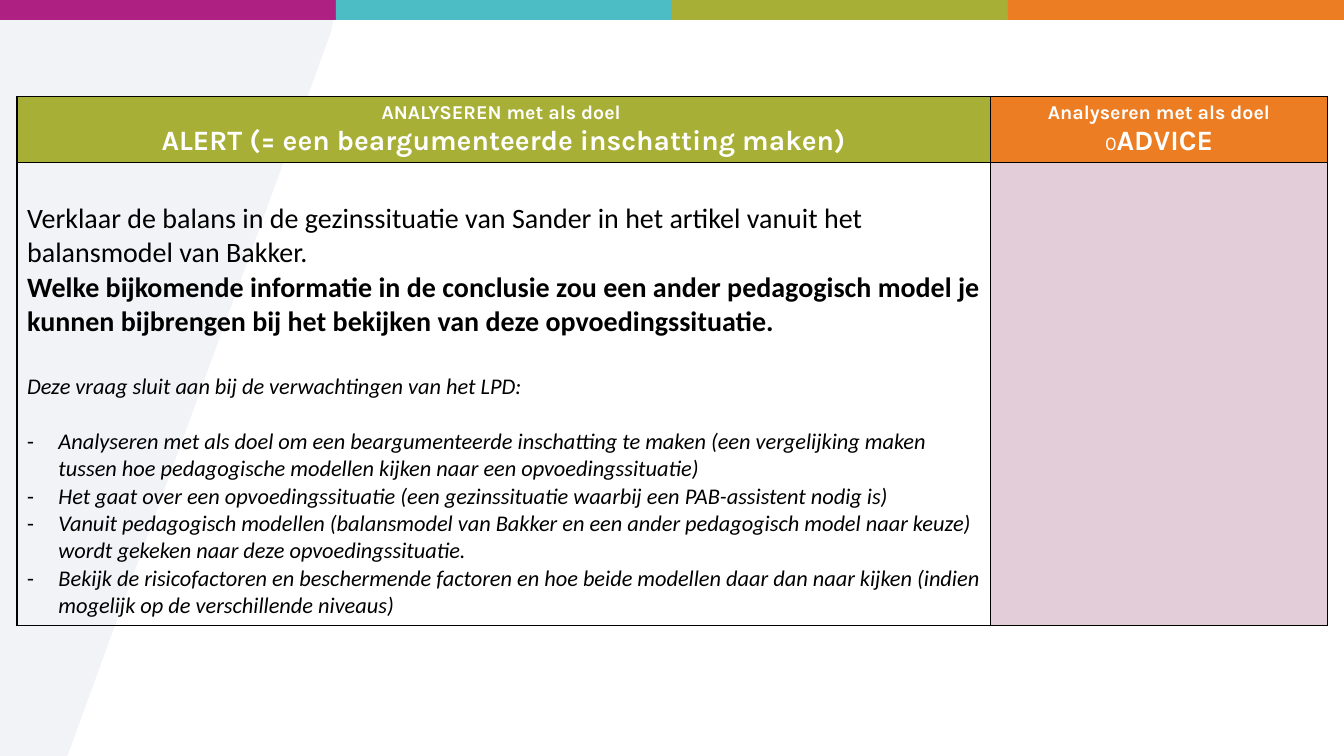
from lxml import etree
from pptx import Presentation
from pptx.dml.color import RGBColor
from pptx.enum.shapes import MSO_SHAPE
from pptx.enum.text import PP_ALIGN
from pptx.oxml.ns import qn
from pptx.util import Cm, Pt

RECTANGLE = MSO_SHAPE.RECTANGLE
CENTER, LEFT = PP_ALIGN.CENTER, PP_ALIGN.LEFT
WHITE, BLACK = "FFFFFF", "000000"
GREEN, ORANGE, PINK = "A8AF37", "EC7D23", "E3CDD8"
BAR_COLORS = ["AE2081", "4CBCC5", GREEN, ORANGE]
WIDTH, HEIGHT = 33.87, 19.05


def color(hex_string):
    return RGBColor.from_string(hex_string)


def add_run(paragraph, text, font="Calibri", size=16, fill=BLACK, bold=False, italic=False):
    run = paragraph.add_run()
    run.text = text
    run.font.name = font
    run.font.size = Pt(size)
    run.font.color.rgb = color(fill)
    run.font.bold = bold
    run.font.italic = italic


class SlideBuilder:
    def __init__(self, slide):
        self.slide = slide

    def paint(self, shape, fill):
        shape.shadow.inherit = False
        shape.fill.solid()
        shape.fill.fore_color.rgb = color(fill)
        shape.line.fill.background()

    def bar(self, left, top, width, height, fill):
        shape = self.slide.shapes.add_shape(RECTANGLE, Cm(left), Cm(top), Cm(width), Cm(height))
        self.paint(shape, fill)

    def polygon(self, points, fill, opacity):
        corners = [(Cm(x), Cm(y)) for x, y in points]
        builder = self.slide.shapes.build_freeform(*corners[0])
        builder.add_line_segments(corners[1:], close=True)
        shape = builder.convert_to_shape()
        self.paint(shape, fill)
        fill_color = shape.fill._xPr.find(f"{qn('a:solidFill')}/{qn('a:srgbClr')}")
        etree.SubElement(fill_color, qn("a:alpha"), val=str(opacity * 1000))

    def table(self, left, top, widths, heights):
        frame = self.slide.shapes.add_table(
            len(heights), len(widths), Cm(left), Cm(top), Cm(sum(widths)), Cm(sum(heights)))
        table = frame.table
        table.first_row = table.horz_banding = False
        for column, width in zip(table.columns, widths):
            column.width = Cm(width)
        for row, height in zip(table.rows, heights):
            row.height = Cm(height)
        return table

    def cell(self, cell, fill=None):
        if fill:
            cell.fill.solid()
            cell.fill.fore_color.rgb = color(fill)
        else:
            cell.fill.background()
        properties = cell._tc.get_or_add_tcPr()
        for index, side in enumerate(["lnL", "lnR", "lnT", "lnB"]):
            border = etree.Element(qn(f"a:{side}"), w=str(Pt(1)))
            solid = etree.SubElement(border, qn("a:solidFill"))
            etree.SubElement(solid, qn("a:srgbClr"), val=BLACK)
            properties.insert(index, border)

    def paragraph(self, cell, runs, first=False, align=LEFT, before=0, bullet=False):
        frame = cell.text_frame
        paragraph = frame.paragraphs[0] if first else frame.add_paragraph()
        paragraph.alignment = align
        if before:
            paragraph.space_before = Pt(before)
        if bullet:
            properties = paragraph._p.get_or_add_pPr()
            properties.set("marL", str(Cm(0.79)))
            properties.set("indent", str(-Cm(0.79)))
            etree.SubElement(properties, qn("a:buFont"), typeface="Calibri")
            etree.SubElement(properties, qn("a:buChar"), char="-")
        for text, style in runs:
            if text == "\n":
                paragraph.add_line_break()
            else:
                add_run(paragraph, text, **style)


def main():
    presentation = Presentation()
    presentation.slide_width, presentation.slide_height = Cm(WIDTH), Cm(HEIGHT)
    builder = SlideBuilder(presentation.slides.add_slide(presentation.slide_layouts[6]))

    # Background wedge and colour bars
    wedge = [(0, 0.13), (8.4, 0.13), (8.4, 0.5), (8.33, 0.84), (1.7, HEIGHT), (0, HEIGHT)]
    builder.polygon(wedge, "E8ECF0", 59)
    bar_width = WIDTH / len(BAR_COLORS)
    for index, fill in enumerate(BAR_COLORS):
        builder.bar(index * bar_width, 0, bar_width, 0.5, fill)

    # Table grid
    table = builder.table(0.43, 2.44, [24.53, 8.5], [1.65, 11.66])
    fills = [[GREEN, ORANGE], [None, PINK]]
    for row, row_fills in enumerate(fills):
        for column, fill in enumerate(row_fills):
            builder.cell(table.cell(row, column), fill)

    # Header row
    small = dict(font="Karla", size=14, fill=WHITE, bold=True)
    large = {**small, "size": 20}
    light = {**small, "bold": False}
    headers = [
        [("ANALYSEREN met als doel ", small), ("\n", None),
         ("ALERT (= een beargumenteerde inschatting maken)", large)],
        [("Analyseren met als doel ", small), ("0", light), ("ADVICE", large)],
    ]
    for column, runs in enumerate(headers):
        builder.paragraph(table.cell(0, column), runs, first=True, align=CENTER)

    # Question and its link with the curriculum
    body = table.cell(1, 0)
    body.margin_top = Cm(0.99)
    builder.paragraph(body, [
        ("Verklaar de balans in de gezinssituatie van Sander in het artikel vanuit het "
         "balansmodel van Bakker. ", dict(size=20)),
        ("\n", None),
        ("Welke bijkomende informatie in de conclusie zou een ander pedagogisch model je "
         "kunnen bijbrengen bij het bekijken van deze opvoedingssituatie.",
         dict(size=20, bold=True)),
    ], first=True)
    note = dict(italic=True)
    builder.paragraph(
        body, [("Deze vraag sluit aan bij de verwachtingen van het LPD:", note)], before=24.4)

    expectations = [
        "Analyseren met als doel om een beargumenteerde inschatting te maken (een vergelijking "
        "maken tussen hoe pedagogische modellen kijken naar een opvoedingssituatie)",
        "Het gaat over een opvoedingssituatie (een gezinssituatie waarbij een PAB-assistent "
        "nodig is)",
        "Vanuit pedagogisch modellen (balansmodel van Bakker en een ander pedagogisch model "
        "naar keuze) wordt gekeken naar deze opvoedingssituatie.",
        "Bekijk de risicofactoren en beschermende factoren en hoe beide modellen daar dan naar "
        "kijken (indien mogelijk op de verschillende niveaus)",
    ]
    for index, text in enumerate(expectations):
        builder.paragraph(body, [(text, note)], before=0 if index else 19.5, bullet=True)

    presentation.save("out.pptx")


if __name__ == "__main__":
    main()
